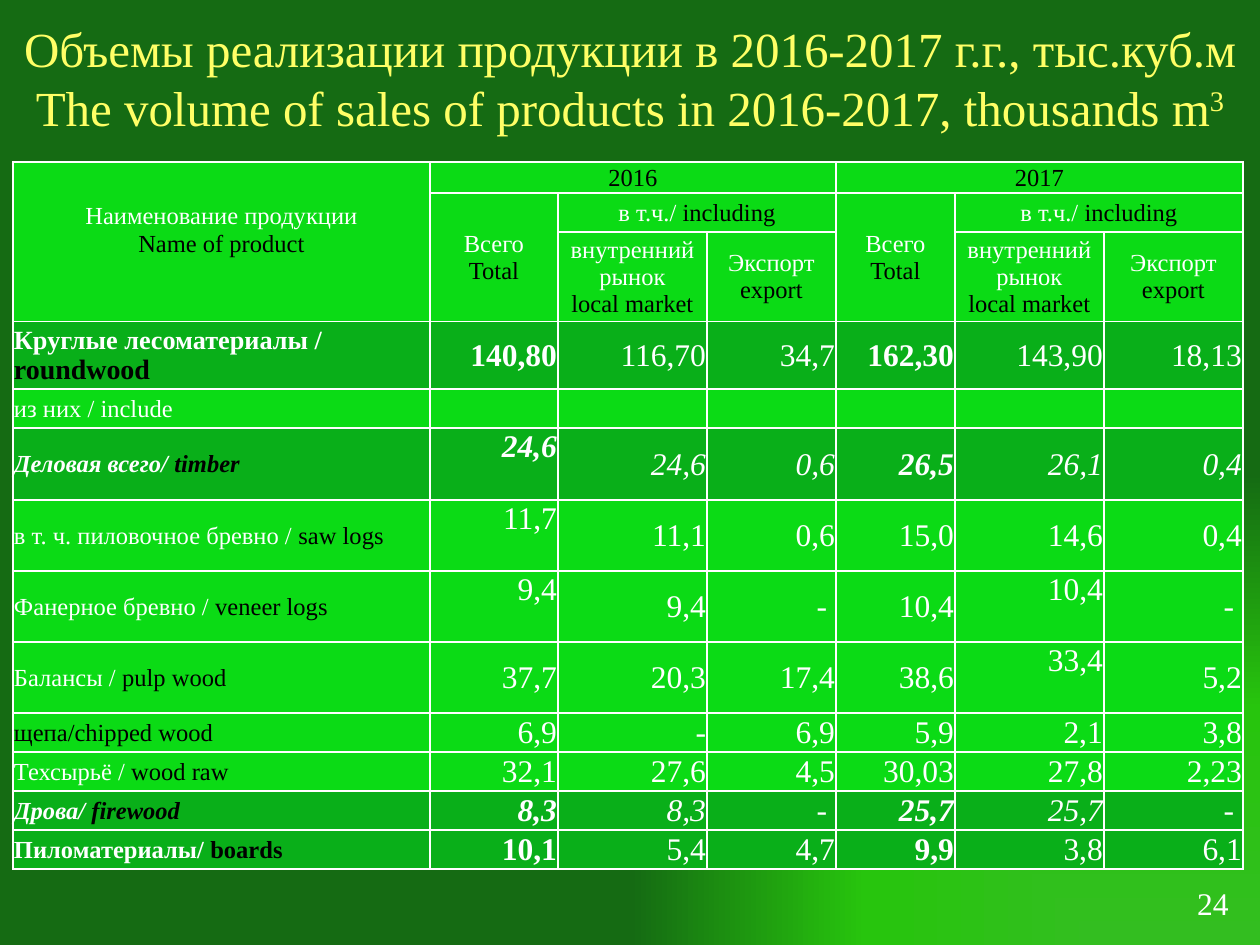
from pptx import Presentation
from pptx.dml.color import RGBColor
from pptx.enum.text import MSO_ANCHOR, PP_ALIGN
from pptx.oxml import parse_xml
from pptx.oxml.ns import nsdecls
from pptx.util import Pt

COLORS = {
    "white": "FFFFFF", "black": "000000", "title": "FFFF66",
    "light": "0BDB15", "dark": "09AF19",
    "near": "33BE20", "mid": "27C50D", "far": "156B13",
}
WIDTHS = [417, 128, 149, 129, 119, 149, 139]
HEIGHTS = [31, 39, 89, 68, 39, 72, 71, 71, 71, 39, 39, 39, 39]

# In a label, the part of a line after "|" is black.
TOTAL = "Всего\n|Total"
PARTS = "в т.ч./ |including"
LOCAL = "внутренний рынок\n|local market"
EXPORT = "Экспорт\n|export"
NAME = "Наименование продукции\n|Name of product"
# row, column, rows spanned, columns spanned, label
HEAD = [(0, 0, 3, 1, NAME)]
for col, year in ((1, "2016"), (4, "2017")):
    HEAD += [
        (0, col, 1, 3, "|" + year),
        (1, col, 2, 1, TOTAL),
        (1, col + 1, 1, 2, PARTS),
        (2, col + 1, 1, 1, LOCAL),
        (2, col + 2, 1, 1, EXPORT),
    ]

# label, values ("~" is a hard space), main row, italic
BODY = [
    ("Круглые лесоматериалы /\n|roundwood",
     "140,80 116,70 34,7 162,30 143,90 18,13", True, False),
    ("из них / include", "", False, False),
    ("Деловая всего/ |timber", "24,6 24,6 0,6 26,5 26,1 0,4", True, True),
    ("в т. ч. пиловочное бревно / |saw logs",
     "11,7 11,1 0,6 15,0 14,6 0,4", False, False),
    ("Фанерное бревно / |veneer logs", "9,4 9,4 -~ 10,4 10,4 -~", False, False),
    ("Балансы / |pulp wood", "37,7 20,3 17,4 38,6 33,4 5,2", False, False),
    ("|щепа/chipped wood", "6,9 - 6,9 5,9 2,1 3,8", False, False),
    ("Техсырьё / |wood raw", "32,1 27,6 4,5 30,03 27,8 2,23", False, False),
    ("Дрова/ |firewood", "8,3 8,3 -~ 25,7 25,7 -~", True, True),
    ("Пиломатериалы/ |boards", "10,1 5,4 4,7 9,9 3,8 6,1", True, False),
]
TOTALS = (1, 4)
RAISED = {(5, 1), (6, 1), (7, 1), (7, 5), (8, 5)}


def px(n):
    return round(n * 914400 / 126)


class Page:
    font = "Times New Roman"

    def __init__(self, deck):
        self.slide = deck.slides.add_slide(deck.slide_layouts[6])

    def back(self):
        """Fill the background with a gradient from the lower right corner."""
        stops = "".join(
            f'<a:gs pos="{pos}000"><a:srgbClr val="{COLORS[key]}"/></a:gs>'
            for pos, key in ((0, "near"), (50, "mid"), (100, "far")))
        self.slide.element.cSld.insert(0, parse_xml(
            f'<p:bg {nsdecls("p", "a")}><p:bgPr><a:gradFill rotWithShape="1">'
            f'<a:gsLst>{stops}</a:gsLst><a:path path="rect">'
            '<a:fillToRect l="100000" t="100000"/></a:path></a:gradFill>'
            '<a:effectLst/></p:bgPr></p:bg>'))

    def style(self, run, size, color, bold=False, italic=False):
        font = run.font
        font.name, font.size = self.font, Pt(size)
        font.bold, font.italic = bold, italic
        font.color.rgb = RGBColor.from_string(COLORS[color])

    def text(self, box, text, size, color, align, anchor=MSO_ANCHOR.TOP):
        frame = self.slide.shapes.add_textbox(*map(px, box)).text_frame
        frame.word_wrap = True
        frame.vertical_anchor = anchor
        frame.text = text
        for line in frame.paragraphs:
            line.alignment = align
            for run in line.runs:
                self.style(run, size, color)
        return frame

    def table(self, left, top, widths, heights):
        grid = self.slide.shapes.add_table(
            len(heights), len(widths), px(left), px(top),
            px(sum(widths)), px(sum(heights))).table
        grid.first_row = grid.horz_banding = False
        for col, width in zip(grid.columns, widths):
            col.width = px(width)
        for row, height in zip(grid.rows, heights):
            row.height = px(height)
        for cell in grid.iter_cells():
            self.frame(cell)
        return grid

    def frame(self, cell):
        """Give a cell its margins, white borders and light fill."""
        cell.margin_left = cell.margin_right = cell.margin_top = px(1)
        cell.margin_bottom = 0
        cell.vertical_anchor = MSO_ANCHOR.MIDDLE
        props = cell._tc.get_or_add_tcPr()
        for side in "LRTB":
            props.append(parse_xml(
                f'<a:ln{side} {nsdecls("a")} w="12700"><a:solidFill>'
                f'<a:srgbClr val="{COLORS["white"]}"/></a:solidFill></a:ln{side}>'))
        self.fill(cell, "light")

    def fill(self, cell, color):
        cell.fill.solid()
        cell.fill.fore_color.rgb = RGBColor.from_string(COLORS[color])

    def label(self, cell, text, align, sizes=(14, 14), bold=False, italic=False):
        """Write lines whose part after "|" is black."""
        cell.text_frame.text = text.replace("|", "")
        for line, source in zip(cell.text_frame.paragraphs, text.split("\n")):
            line.alignment = align
            white, _, black = source.partition("|")
            line.text = ""
            for part, size, color in zip(
                    (white, black), sizes, ("white", "black")):
                if part:
                    run = line.add_run()
                    run.text = part
                    self.style(run, size, color, bold, italic)

    def value(self, cell, text, bold, italic):
        line = cell.text_frame.paragraphs[0]
        line.text = text.replace("~", chr(160))
        line.alignment = PP_ALIGN.RIGHT
        self.style(line.runs[0], 18, "white", bold, italic)


def main():
    deck = Presentation()
    deck.slide_width, deck.slide_height = px(1260), px(945)
    page = Page(deck)
    page.back()

    title = page.text(
        (0, 0, 1260, 155),
        "Объемы реализации продукции в 2016-2017 г.г., тыс.куб.м\v"
        "The volume of sales of products in 2016-2017, thousands m",
        28, "title", PP_ALIGN.CENTER, MSO_ANCHOR.MIDDLE)
    power = title.paragraphs[0].add_run()
    power.text = "3"
    page.style(power, 28, "title")
    power.font._element.set("baseline", "30000")

    grid = page.table(13, 162, WIDTHS, HEIGHTS)
    for row, col, tall, wide, text in HEAD:
        cell = grid.cell(row, col)
        if tall * wide > 1:
            cell.merge(grid.cell(row + tall - 1, col + wide - 1))
        page.label(cell, text, PP_ALIGN.CENTER)
    grid.cell(0, 0).margin_bottom = px(24)

    for row, (text, values, strong, slant) in enumerate(BODY, 3):
        sizes = (15, 16) if row == 3 else (14, 14)
        page.label(grid.cell(row, 0), text, PP_ALIGN.LEFT, sizes, strong, slant)
        for col, value in enumerate(values.split(), 1):
            cell = grid.cell(row, col)
            page.value(cell, value, strong and col in TOTALS, slant)
            if (row, col) in RAISED:
                cell.vertical_anchor = MSO_ANCHOR.TOP
        if strong:
            for col in range(len(WIDTHS)):
                page.fill(grid.cell(row, col), "dark")

    page.text((1165, 878, 76, 63), "24", 18, "white", PP_ALIGN.RIGHT)
    deck.save("out.pptx")


if __name__ == "__main__":
    main()
